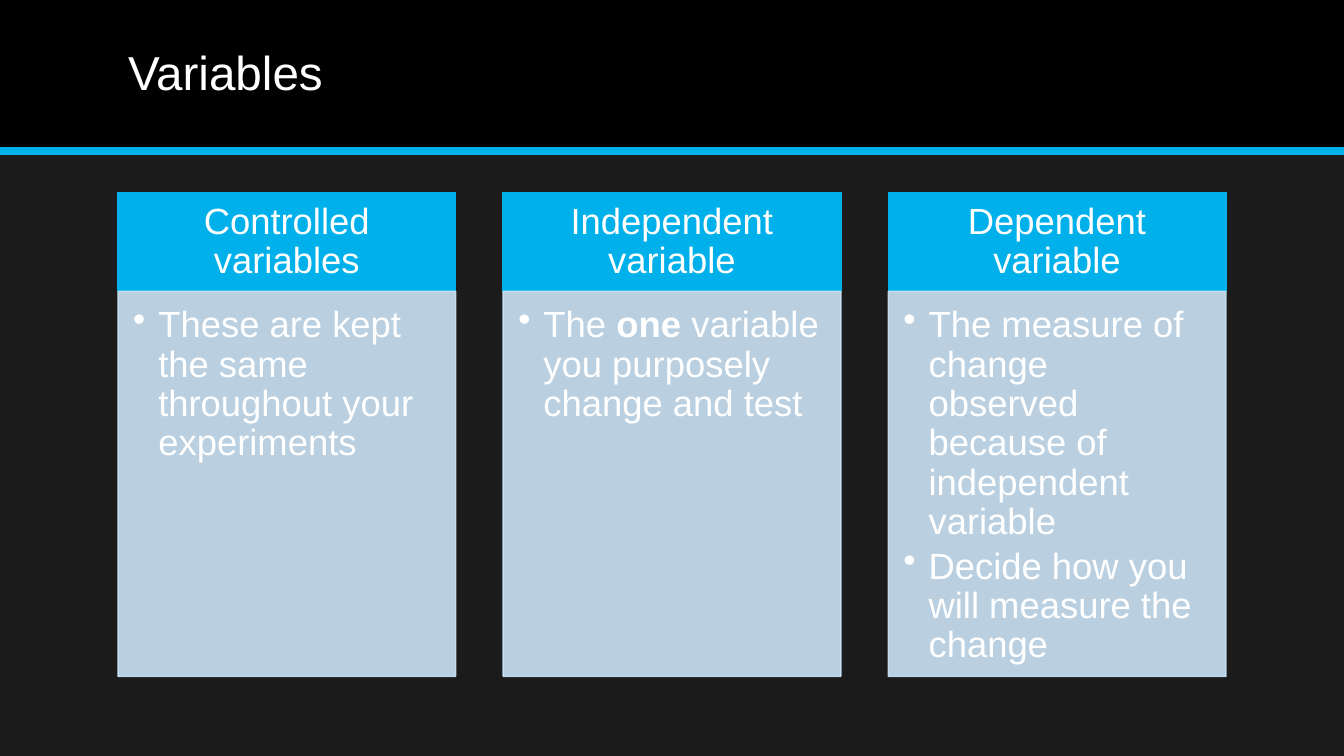
import pptx
import pptx.dml.color
import pptx.enum.shapes
import pptx.enum.text
import pptx.oxml
import pptx.oxml.ns
import pptx.util

Inches = pptx.util.Inches
Pt = pptx.util.Pt
ALIGN = pptx.enum.text.PP_ALIGN
ANCHOR = pptx.enum.text.MSO_ANCHOR

COLORS = {
    "background": "1B1B1B",
    "band": "000000",
    "accent": "00B0EA",
    "panel": "CCE4F7",
    "text": "FFFFFF",
}

# Grid: three columns, each with a heading row and a list row
WIDTH, HEIGHT = 13.33, 7.5
BAND_HEIGHT = HEIGHT / 5
LEFT, COLUMN_WIDTH, COLUMN_PITCH = 1.17, 3.35, 3.82
HEADING_TOP, HEADING_HEIGHT = 1.91, 0.98
LIST_TOP, LIST_HEIGHT = HEADING_TOP + HEADING_HEIGHT, 3.82
INDENT = 0.25

HEADING_FRAME = {
    "margin_left": Inches(0.2), "margin_right": Inches(0.2),
    "margin_top": Inches(0.12), "margin_bottom": Inches(0.12),
    "vertical_anchor": ANCHOR.MIDDLE, "word_wrap": True,
}
LIST_FRAME = {
    "margin_left": Inches(0.15), "margin_right": Inches(0.2),
    "margin_top": Inches(0.15), "margin_bottom": Inches(0.23),
    "vertical_anchor": ANCHOR.TOP, "word_wrap": True,
}
TITLE_FRAME = {"vertical_anchor": ANCHOR.MIDDLE, "word_wrap": True}
HEADING_PARAGRAPH = {"alignment": ALIGN.CENTER, "line_spacing": 0.9}
LIST_PARAGRAPH = {"alignment": ALIGN.LEFT, "line_spacing": 0.9, "space_after": Pt(4)}
TITLE_PARAGRAPH = {"alignment": ALIGN.LEFT, "line_spacing": 0.9}

# Each list item is a sequence of (text, bold) runs
COLUMNS = [
    ("Controlled variables",
     [[("These are kept the same throughout your experiments", False)]]),
    ("Independent variable",
     [[("The ", False), ("one", True),
       (" variable you purposely change and test", False)]]),
    ("Dependent variable",
     [[("The measure of change observed because of independent variable", False)],
      [("Decide how you will measure the change", False)]]),
]


def color(name):
    return pptx.dml.color.RGBColor.from_string(COLORS[name])


def apply_format(target, values):
    for name, value in values.items():
        setattr(target, name, value)


def set_alpha(shape, percent):
    for color_element in shape.element.spPr.iter(pptx.oxml.ns.qn("a:srgbClr")):
        color_element.append(pptx.oxml.parse_xml(
            f'<a:alpha {pptx.oxml.ns.nsdecls("a")} val="{percent * 1000}"/>'))


def add_bullet(paragraph):
    properties = paragraph._p.get_or_add_pPr()
    properties.set("marL", str(Inches(INDENT)))
    properties.set("indent", str(-Inches(INDENT)))
    properties.append(pptx.oxml.parse_xml(
        f'<a:buChar {pptx.oxml.ns.nsdecls("a")} char="•"/>'))


def write_text(shape, items, size, frame_format, paragraph_format, bullets=False):
    frame = shape.text_frame
    apply_format(frame, frame_format)
    for index, runs in enumerate(items):
        paragraph = frame.add_paragraph() if index else frame.paragraphs[0]
        apply_format(paragraph, paragraph_format)
        if bullets:
            add_bullet(paragraph)
        for text, bold in runs:
            run = paragraph.add_run()
            run.text = text
            apply_format(run.font, {"name": "Arial", "size": Pt(size), "bold": bold})
            run.font.color.rgb = color("text")


def add_box(slide, left, top, width, height, fill, outlined=True):
    shape = slide.shapes.add_shape(
        pptx.enum.shapes.MSO_SHAPE.RECTANGLE,
        Inches(left), Inches(top), Inches(width), Inches(height))
    shape.shadow.inherit = False
    shape.fill.solid()
    shape.fill.fore_color.rgb = color(fill)
    if outlined:
        shape.line.color.rgb = color(fill)
        shape.line.width = Pt(1)
    else:
        shape.line.fill.background()
    return shape


def add_rule(slide, top):
    rule = slide.shapes.add_connector(
        pptx.enum.shapes.MSO_CONNECTOR.STRAIGHT,
        0, Inches(top), Inches(WIDTH), Inches(top))
    rule.line.color.rgb = color("accent")
    rule.line.width = Pt(6)
    rule.element.spPr.append(pptx.oxml.parse_xml(
        f'<a:effectLst {pptx.oxml.ns.nsdecls("a")}/>'))


def add_title(slide, text):
    title = slide.shapes.title
    apply_format(title, {"left": Inches(LEFT), "top": Inches(0.14),
                         "width": Inches(11), "height": Inches(1.2)})
    write_text(title, [[(text, False)]], 34, TITLE_FRAME, TITLE_PARAGRAPH)
    # Bring the title in front of the band
    title.element.getparent().append(title.element)


def add_column(slide, index, heading, items):
    left = LEFT + index * COLUMN_PITCH
    header = add_box(slide, left, HEADING_TOP, COLUMN_WIDTH, HEADING_HEIGHT, "accent")
    write_text(header, [[(heading, False)]], 26, HEADING_FRAME, HEADING_PARAGRAPH)
    panel = add_box(slide, left, LIST_TOP, COLUMN_WIDTH, LIST_HEIGHT, "panel")
    set_alpha(panel, 90)
    write_text(panel, items, 26, LIST_FRAME, LIST_PARAGRAPH, bullets=True)


def main():
    presentation = pptx.Presentation()
    presentation.slide_width = Inches(WIDTH)
    presentation.slide_height = Inches(HEIGHT)
    slide = presentation.slides.add_slide(
        presentation.slide_layouts.get_by_name("Title Only"))
    slide.background.fill.solid()
    slide.background.fill.fore_color.rgb = color("background")

    # Title band
    add_box(slide, 0, 0, WIDTH, BAND_HEIGHT, "band", outlined=False)
    add_rule(slide, BAND_HEIGHT)
    add_title(slide, "Variables")

    # Variable columns
    for index, (heading, items) in enumerate(COLUMNS):
        add_column(slide, index, heading, items)

    presentation.save("out.pptx")


if __name__ == "__main__":
    main()
